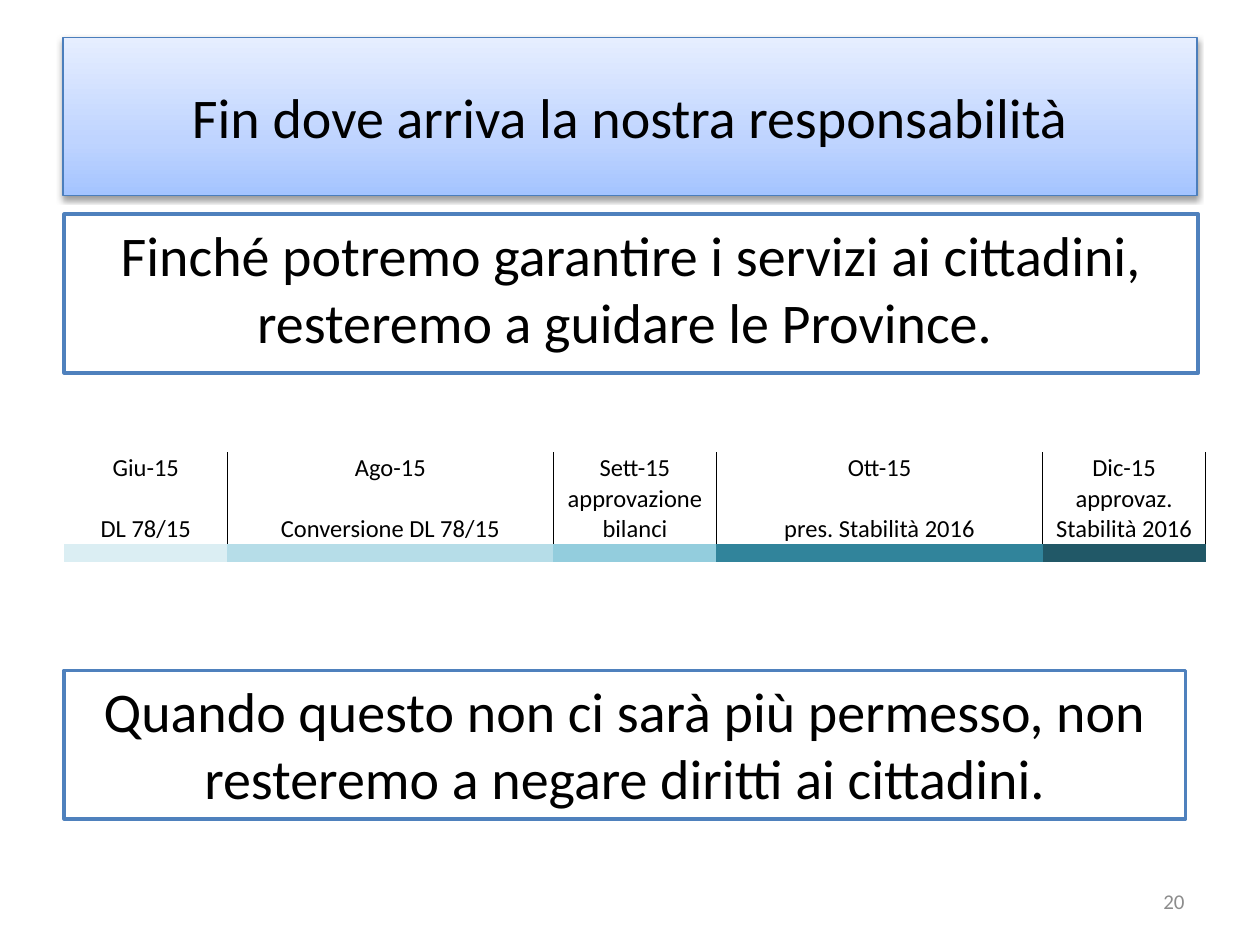
from lxml.etree import SubElement
from pptx import Presentation
from pptx.dml.color import RGBColor
from pptx.enum.text import MSO_ANCHOR as Anchor, PP_ALIGN as Align
from pptx.oxml import parse_xml
from pptx.oxml.ns import nsdecls, qn
from pptx.util import Inches, Pt

FONT = "Calibri"
BLACK = "000000"
BLUE = "4F81BD"
LEFT = 0.51
NO_STYLE = "{2D5ABB26-0587-4C30-8999-92F81FD0307C}"
PERIODS = [
    ("Giu-15", "DL 78/15", "DBEEF3", 1),
    ("Ago-15", "Conversione DL 78/15", "B6DDE8", 2),
    ("Sett-15", "approvazione bilanci", "93CDDD", 1),
    ("Ott-15", "pres. Stabilità 2016", "31849B", 2),
    ("Dic-15", "approvaz. Stabilità 2016", "215867", 1),
]


def colour(value):
    return RGBColor.from_string(value)


def drawing(tag, body, attributes=""):
    return parse_xml(f'<a:{tag} {nsdecls("a")} {attributes}>{body}</a:{tag}>')


def write(frame, text, size=32, fill=BLACK, align=Align.CENTER, anchor=Anchor.TOP):
    frame.word_wrap = True
    frame.vertical_anchor = anchor
    para = frame.paragraphs[0]
    para.alignment = align
    span = para.add_run()
    span.text = text
    span.font.name = FONT
    span.font.size = Pt(size)
    span.font.color.rgb = colour(fill)
    return para


def place(box, left, top, width, height):
    box.left, box.top = Inches(left), Inches(top)
    box.width, box.height = Inches(width), Inches(height)


def outline(box, value, width):
    box.line.color.rgb = colour(value)
    box.line.width = Pt(width)


def add_title(page, text):
    box = page.shapes.title
    place(box, 0.5, 0.3, 9, 1.25)
    write(box.text_frame, text, anchor=Anchor.MIDDLE)
    outline(box, "4B7EBC", 0.75)
    stops = "".join(
        f'<a:gs pos="{place_at * 1000}"><a:srgbClr val="{value}"/></a:gs>'
        for place_at, value in [(0, "A4C4FF"), (35, "BFD4FF"), (100, "E6EEFF")]
    )
    gradient = drawing(
        "gradFill", f'<a:gsLst>{stops}</a:gsLst><a:lin ang="16200000" scaled="0"/>'
    )
    shadow = drawing(
        "effectLst",
        f'<a:outerShdw blurRad="{Pt(3.1)}" dist="{Pt(1.6)}" dir="5400000" rotWithShape="0">'
        '<a:srgbClr val="000000"><a:alpha val="38000"/></a:srgbClr></a:outerShdw>',
    )
    line = box.element.spPr.find(qn("a:ln"))
    line.addprevious(gradient)
    line.addnext(shadow)


def add_promise(page, text):
    box = page.placeholders[1]
    place(box, LEFT, 1.7, 9, 1.26)
    box.fill.solid()
    box.fill.fore_color.rgb = colour("FFFFFF")
    outline(box, BLUE, 2)
    para = write(box.text_frame, text)
    properties = para._p.get_or_add_pPr()
    properties.set("marL", "0")
    properties.set("indent", "0")
    SubElement(properties, qn("a:buNone"))


def add_text(page, text, left, top, width, height, **text_format):
    box = page.shapes.add_textbox(*map(Inches, (left, top, width, height)))
    write(box.text_frame, text, **text_format)
    return box


def set_margins(cell):
    cell.margin_left = cell.margin_right = cell.margin_top = Inches(0.01)
    cell.margin_bottom = 0


def add_right_border(cell):
    border = drawing(
        "lnR",
        f'<a:solidFill><a:srgbClr val="{BLACK}"/></a:solidFill>',
        f'w="{Pt(0.5)}"',
    )
    cell._tc.get_or_add_tcPr().insert(0, border)


def add_timeline(page):
    columns = sum(period[3] for period in PERIODS)
    frame = page.shapes.add_table(
        3, columns, Inches(LEFT), Inches(3.59), Inches(9.06), Inches(0.87)
    )
    table = frame.table
    table._tbl.tblPr.find(qn("a:tableStyleId")).text = NO_STYLE
    table.first_row = table.horz_banding = False
    for column in table.columns:
        column.width = Inches(9.06 / columns)
    for row, height in zip(table.rows, (0.24, 0.48, 0.15)):
        row.height = Inches(height)
    start = 0
    for month, event, fill, width in PERIODS:
        for row, text in enumerate((month, event)):
            cell = table.cell(row, start)
            if width > 1:
                cell.merge(table.cell(row, start + width - 1))
            write(cell.text_frame, text, size=14)
            cell.vertical_anchor = Anchor.BOTTOM
            for column in range(start, start + width):
                part = table.cell(row, column)
                set_margins(part)
                part.fill.background()
            for column in {start, start + width - 1}:
                add_right_border(table.cell(row, column))
        for column in range(start, start + width):
            cell = table.cell(2, column)
            set_margins(cell)
            cell.fill.solid()
            cell.fill.fore_color.rgb = colour(fill)
            SubElement(cell.text_frame.paragraphs[0]._p, qn("a:endParaRPr"), sz="600")
        start += width


def main():
    deck = Presentation()
    deck.slide_width, deck.slide_height = Inches(10), Inches(7.5)
    page = deck.slides.add_slide(deck.slide_layouts[1])
    add_title(page, "Fin dove arriva la nostra responsabilità")
    add_promise(
        page,
        "Finché potremo garantire i servizi ai cittadini, resteremo a guidare le Province. ",
    )
    add_text(page, "20", 7.17, 6.95, 2.33, 0.4, size=12, fill="8C8C8C",
             align=Align.RIGHT, anchor=Anchor.MIDDLE)
    limit = add_text(
        page,
        "Quando questo non ci sarà più permesso, non resteremo a negare diritti ai cittadini.",
        LEFT, 5.32, 8.9, 1.18,
    )
    outline(limit, BLUE, 2)
    add_timeline(page)
    deck.save("out.pptx")


if __name__ == "__main__":
    main()
